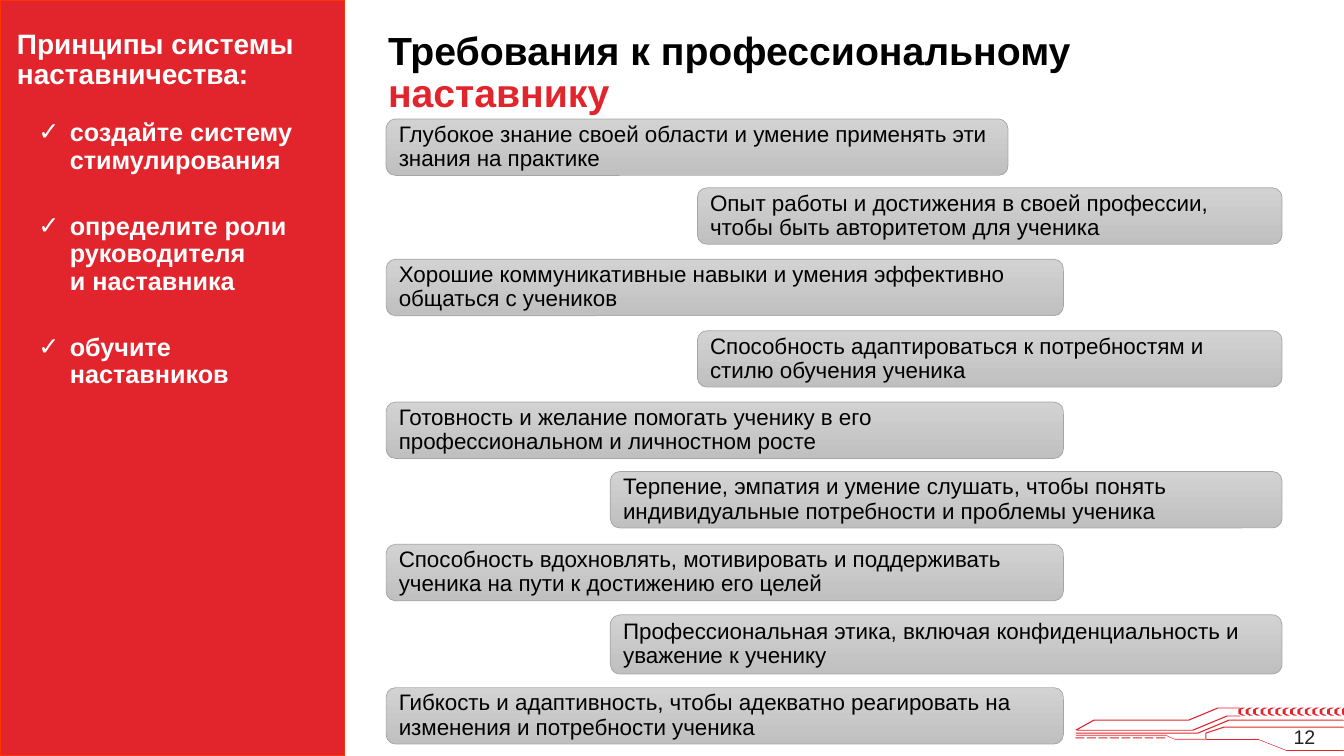
"""Build the slide on requirements for a professional mentor."""
from dataclasses import dataclass
from typing import Any

from lxml import etree
from pptx import Presentation
from pptx import util as u
from pptx.dml.color import RGBColor
from pptx.enum import shapes, text
from pptx.oxml import ns

RED = RGBColor(0xE2, 0x25, 0x2C)
ORANGE = RGBColor(0xFF, 0x33, 0x00)
BLACK = RGBColor(0, 0, 0)
WHITE = RGBColor(0xFF, 0xFF, 0xFF)
INK = RGBColor(0x23, 0x1F, 0x20)
CARD_TOP = RGBColor(0xD2, 0xD2, 0xD2)
CARD_BOTTOM = RGBColor(0xC0, 0xC0, 0xC0)
CARD_EDGE = RGBColor(0xA5, 0xA5, 0xA5)

PAGE_WIDTH, PAGE_HEIGHT = 960, 540
CARDS_LEFT, CARDS_RIGHT = 275.8, 915.8
RAIL_THICKNESS = 0.6
BULLET_INDENT = 22.5

Point = tuple[float, float]


@dataclass(frozen=True)
class Requirement:
    wording: str
    top: float
    width: float
    on_right: bool = False
    height: float = 40.3

    @property
    def left(self) -> float:
        return CARDS_RIGHT - self.width if self.on_right else CARDS_LEFT


@dataclass(frozen=True)
class Style:
    size: float
    color: RGBColor
    bold: bool = False


REQUIREMENTS = [
    Requirement("Глубокое знание своей области и умение применять эти знания на практике", 85, 444.2),
    Requirement("Опыт работы и достижения в своей профессии, чтобы быть авторитетом для ученика",
                134.2, 417.6, True),
    Requirement("Хорошие коммуникативные навыки и умения эффективно общаться с учеников", 185.2, 483.8),
    Requirement("Способность адаптироваться к потребностям и стилю обучения ученика", 236.2, 417.6, True),
    Requirement("Готовность и желание помогать ученику в его профессиональном и личностном росте",
                287.2, 483.8),
    Requirement("Терпение, эмпатия и умение слушать, чтобы понять индивидуальные потребности "
                "и проблемы ученика", 336.8, 479.8, True),
    Requirement("Способность вдохновлять, мотивировать и поддерживать ученика на пути "
                "к достижению его целей", 388.8, 483.8),
    Requirement("Профессиональная этика, включая конфиденциальность и уважение к ученику",
                439.2, 479.8, True, 42.3),
    Requirement("Гибкость и адаптивность, чтобы адекватно реагировать на изменения "
                "и потребности ученика", 491.2, 483.8),
]
PRINCIPLES = ["создайте систему стимулирования",
              "определите роли руководителя \vи наставника",
              "обучите наставников"]
RAILS: list[list[Point]] = [
    [(861.1, 527.8), (838.8, 527.8), (832.3, 524.9), (768.2, 524.9)],
    [(885.6, 505.4), (869.8, 505.4), (848.9, 514.1), (781.2, 514.1),
     (768.2, 521.3), (851.8, 521.3), (876.2, 511.2), (885.6, 511.2)],
    [(959.4, 519.1), (874.1, 519.1), (861.1, 523.4), (861.1, 527.9),
     (898.6, 527.9), (918.7, 535.8), (959.4, 535.8)],
    [(959.4, 514.1), (877.7, 514.1), (855.4, 523.4), (768.2, 523.4)],
]
CHEVRON: list[Point] = [(5, 505.4), (2.6, 505.4), (0, 506.9), (0, 509.8),
                        (2.6, 511.2), (5, 511.2), (2, 509.8), (2, 506.9)]


def apply(target: Any, values: dict[str, Any]) -> None:
    for name, value in values.items():
        setattr(target, name, value)


def place(part: Any, left: float, top: float, width: float, height: float) -> None:
    apply(part, {"left": u.Pt(left), "top": u.Pt(top), "width": u.Pt(width), "height": u.Pt(height)})


def frame_text(part: Any, anchor: Any = text.MSO_ANCHOR.MIDDLE) -> Any:
    apply(part.text_frame, {"word_wrap": True, "auto_size": text.MSO_AUTO_SIZE.NONE,
                            "vertical_anchor": anchor})
    return part.text_frame


def write(paragraph: Any, wording: str, style: Style, spacing: float = 0.9, before: float = 0) -> None:
    apply(paragraph, {"alignment": text.PP_ALIGN.LEFT, "line_spacing": spacing,
                      "space_before": u.Pt(before)})
    paragraph.add_run()
    run = paragraph.runs[-1]
    run.text = wording
    for part in paragraph.runs:
        if part is run or part.font.size is None:
            apply(part.font, {"name": "Arial", "size": u.Pt(style.size), "bold": style.bold})
            part.font.color.rgb = style.color


def write_principle(paragraph: Any, wording: str, style: Style, before: float) -> None:
    properties = paragraph._p.get_or_add_pPr()
    properties.set("marL", str(u.Pt(BULLET_INDENT)))
    properties.set("indent", str(u.Pt(-BULLET_INDENT)))
    etree.SubElement(properties, ns.qn("a:buFont"), typeface="Arial")
    etree.SubElement(properties, ns.qn("a:buChar"), char="✓")
    for number, line in enumerate(wording.split("\v")):
        if number:
            paragraph.add_line_break()
        write(paragraph, line, style, before=before)


def draw_circuit(slide: Any) -> None:
    contours: list[list[Point]] = []
    for i in range(8):
        left, right = 768.2 + 8.23 * i, 774.6 + 8.23 * i
        contours.append([(left, 526.8), (right, 526.8), (right, 527.4), (left, 527.4)])
    for rail in RAILS:
        contours.append(rail + [(x + RAIL_THICKNESS, y + RAIL_THICKNESS) for x, y in reversed(rail)])
    for i in range(15):
        contours.append([(min(884.6 + 5.28 * i + x, PAGE_WIDTH), y) for x, y in CHEVRON])
    builder = None
    for contour in contours:
        start, *rest = [(u.Pt(x), u.Pt(y)) for x, y in contour]
        if builder is None:
            builder = slide.shapes.build_freeform(*start)
        else:
            builder.move_to(*start)
        builder.add_line_segments(rest, close=True)
    circuit = builder.convert_to_shape()
    circuit.shadow.inherit = False
    circuit.fill.solid()
    circuit.fill.fore_color.rgb = RED
    circuit.line.fill.background()


def draw_requirement(slide: Any, requirement: Requirement) -> None:
    card = slide.shapes.add_shape(shapes.MSO_SHAPE.ROUNDED_RECTANGLE, u.Pt(requirement.left),
                                  u.Pt(requirement.top), u.Pt(requirement.width),
                                  u.Pt(requirement.height))
    card.shadow.inherit = False
    card.fill.gradient()
    card.fill.gradient_angle = 270
    for stop, color in zip(card.fill.gradient_stops, (CARD_TOP, CARD_BOTTOM)):
        stop.color.rgb = color
    card.line.color.rgb = CARD_EDGE
    card.line.width = u.Pt(0.5)
    write(frame_text(card).paragraphs[0], requirement.wording, Style(16, BLACK))


def draw_sidebar(slide: Any, principles: Any) -> None:
    panel = slide.shapes.add_shape(shapes.MSO_SHAPE.RECTANGLE, 0, 0, u.Pt(246.2), u.Pt(PAGE_HEIGHT))
    panel.shadow.inherit = False
    panel.fill.solid()
    panel.fill.fore_color.rgb = RED
    panel.line.color.rgb = ORANGE
    panel.line.width = u.Pt(1)
    slide.shapes.element.insert(2, panel.element)
    heading = slide.shapes.add_textbox(u.Pt(5), u.Pt(4.3), u.Pt(284.4), u.Pt(77.8))
    write(frame_text(heading).paragraphs[0], "Принципы системы наставничества:", Style(20, WHITE, True))
    place(principles, 20.2, 82.2, 206.6, 220)
    listing = frame_text(principles, text.MSO_ANCHOR.TOP)
    for number, wording in enumerate(PRINCIPLES):
        paragraph = listing.add_paragraph() if number else listing.paragraphs[0]
        write_principle(paragraph, wording, Style(18, WHITE, True), 28 if number else 0)


def main() -> None:
    deck = Presentation()
    apply(deck, {"slide_width": u.Pt(PAGE_WIDTH), "slide_height": u.Pt(PAGE_HEIGHT)})
    slide = deck.slides.add_slide(deck.slide_layouts[1])
    title, principles = slide.placeholders
    draw_circuit(slide)
    page_number = slide.shapes.add_textbox(u.Pt(900), u.Pt(517.7), u.Pt(39.6), u.Pt(17.3))
    number_frame = frame_text(page_number)
    apply(number_frame, dict.fromkeys(("margin_left", "margin_top", "margin_right", "margin_bottom"), 0))
    write(number_frame.paragraphs[0], "12", Style(14, INK), spacing=1.0)
    number_frame.paragraphs[0].alignment = text.PP_ALIGN.RIGHT
    for requirement in REQUIREMENTS:
        draw_requirement(slide, requirement)
    place(title, 270, 13.7, 645.8, 77.8)
    headline = frame_text(title).paragraphs[0]
    write(headline, "Требования к профессиональному ", Style(28, BLACK, True))
    write(headline, "наставнику", Style(28, RED, True))
    draw_sidebar(slide, principles)
    deck.save("out.pptx")


if __name__ == "__main__":
    main()
